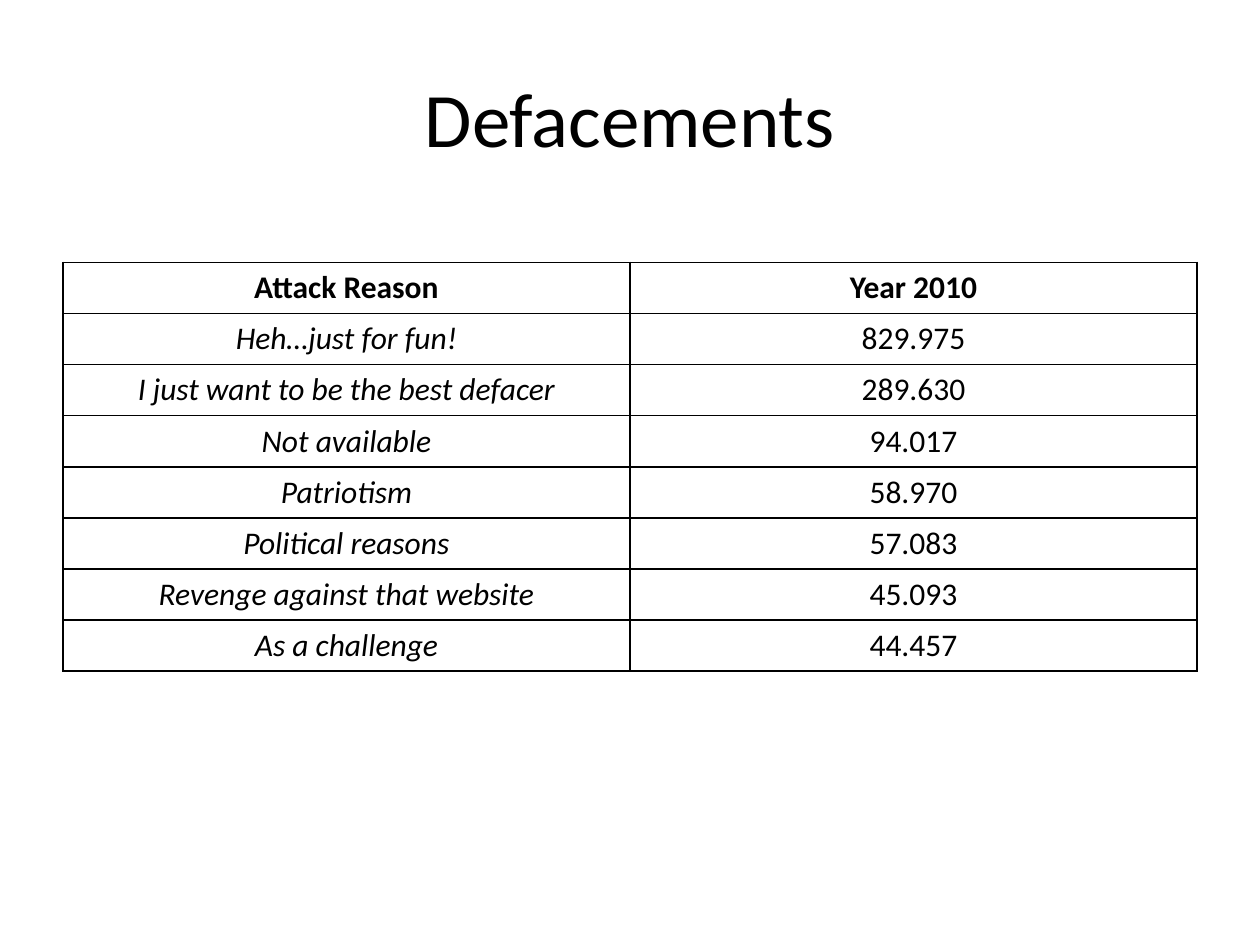
from lxml.etree import SubElement
from pptx import Presentation
from pptx.dml.color import RGBColor
from pptx.enum.text import MSO_ANCHOR, PP_ALIGN
from pptx.oxml.ns import qn
from pptx.util import Cm, Pt

BLACK = RGBColor(0, 0, 0)
TITLE_ONLY_LAYOUT = 5
ATTACK_REASONS = [
    ("Attack Reason", "Year 2010"),
    ("Heh…just for fun!", "829.975"),
    ("I just want to be the best defacer", "289.630"),
    ("Not available", "94.017"),
    ("Patriotism", "58.970"),
    ("Political reasons", "57.083"),
    ("Revenge against that website", "45.093"),
    ("As a challenge", "44.457"),
]


class SlideBuilder:
    font_name = "Calibri"
    border_width = Pt(1)

    def __init__(self, slide):
        self.slide = slide

    def add_text(self, text_frame, text, **font_format):
        """Put centred, formatted text into a frame."""
        paragraph = text_frame.paragraphs[0]
        paragraph.alignment = PP_ALIGN.CENTER
        run = paragraph.add_run()
        run.text = text
        run.font.color.rgb = BLACK
        for name, value in {"name": self.font_name, **font_format}.items():
            setattr(run.font, name, value)

    def add_title(self, text, left, top, width, height):
        title = self.slide.shapes.title
        position = {"left": left, "top": top, "width": width, "height": height}
        for name, value in position.items():
            setattr(title, name, value)
        title.text_frame.vertical_anchor = MSO_ANCHOR.MIDDLE
        self.add_text(title.text_frame, text, size=Pt(44))

    def add_borders(self, cell):
        properties = cell._tc.get_or_add_tcPr()
        for side in ("a:lnL", "a:lnR", "a:lnT", "a:lnB"):
            line = SubElement(properties, qn(side), w=str(self.border_width))
            fill = SubElement(line, qn("a:solidFill"))
            SubElement(fill, qn("a:srgbClr"), val=str(BLACK))

    def add_table(self, rows, left, top, width, row_height):
        table = self.slide.shapes.add_table(
            len(rows), len(rows[0]), left, top, width, row_height * len(rows)
        ).table
        table.horz_banding = False
        for row_index, row in enumerate(rows):
            for column_index, text in enumerate(row):
                cell = table.cell(row_index, column_index)
                header = row_index == 0
                self.add_borders(cell)
                cell.fill.background()
                cell.vertical_anchor = MSO_ANCHOR.MIDDLE
                self.add_text(cell.text_frame, text, size=Pt(18), bold=header,
                              italic=not header and column_index == 0)


def main():
    presentation = Presentation()
    presentation.slide_width, presentation.slide_height = Cm(25.4), Cm(19.05)
    layout = presentation.slide_layouts[TITLE_ONLY_LAYOUT]
    builder = SlideBuilder(presentation.slides.add_slide(layout))

    # Title
    builder.add_title("Defacements", Cm(1.27), Cm(0.76), Cm(22.86), Cm(3.18))

    # Reasons for attacks and their counts
    builder.add_table(ATTACK_REASONS, Cm(1.27), Cm(5.29), Cm(22.86), Cm(1.03))

    presentation.save("out.pptx")


if __name__ == "__main__":
    main()
